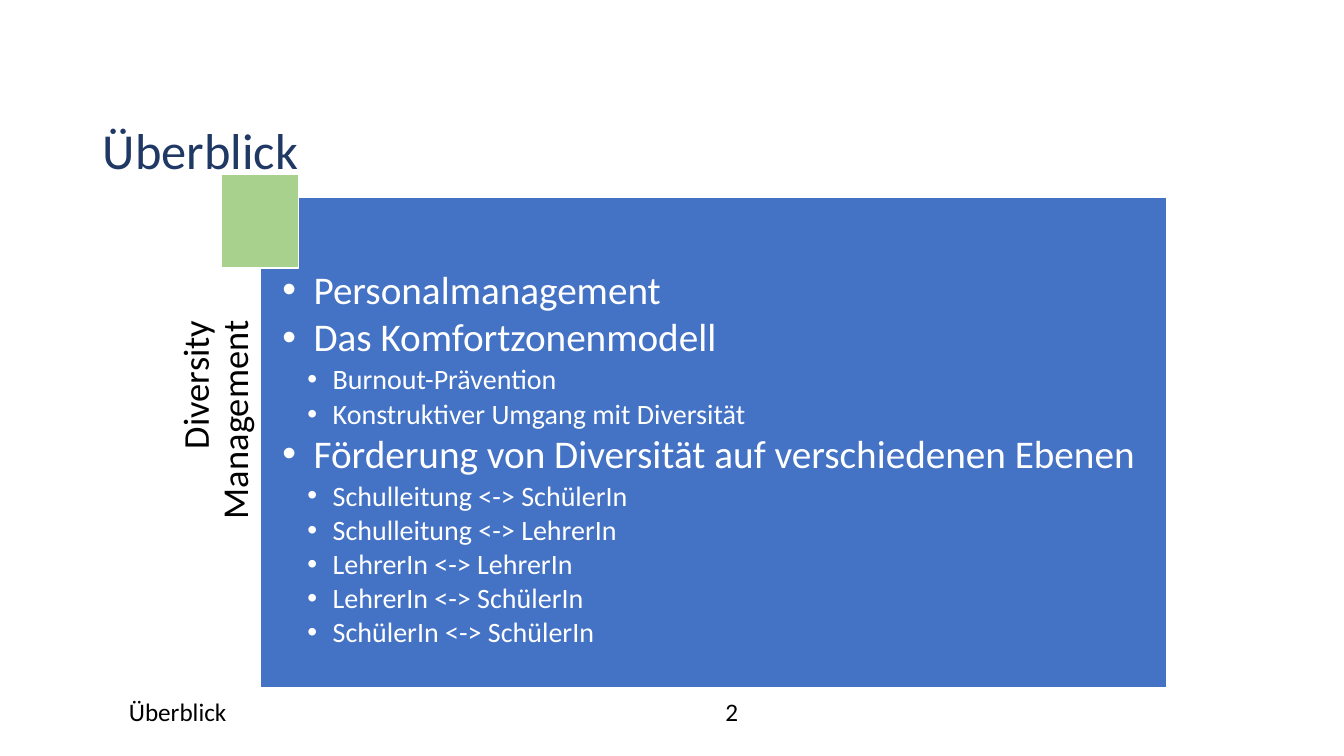
import pptx
import pptx.util
import pptx.dml.color
import pptx.enum.shapes
import pptx.enum.text
import pptx.oxml
import pptx.oxml.ns

COLOURS = {
    "heading": "203864",
    "panel": "4472C4",
    "accent": "A9D18E",
    "light": "FFFFFF",
    "dark": "000000",
}
ALIGN = pptx.enum.text.PP_ALIGN

TOPICS = [
    (0, "Personalmanagement"),
    (0, "Das Komfortzonenmodell"),
    (1, "Burnout-Prävention"),
    (1, "Konstruktiver Umgang mit Diversität"),
    (0, "Förderung von Diversität auf verschiedenen Ebenen"),
    (1, "Schulleitung <-> SchülerIn"),
    (1, "Schulleitung <-> LehrerIn"),
    (1, "LehrerIn <-> LehrerIn"),
    (1, "LehrerIn <-> SchülerIn"),
    (1, "SchülerIn <-> SchülerIn"),
]


class Deck:
    font = "Calibri"
    columns = 100
    rows = 100
    level_sizes = (28, 20)
    level_margins = (2.33, 3.75)
    level_hangings = (2.33, 1.88)

    def __init__(self):
        self.presentation = pptx.Presentation()
        self.presentation.slide_width = pptx.util.Inches(13.33)
        self.presentation.slide_height = pptx.util.Inches(7.5)
        layout = self.presentation.slide_layouts[1]
        self.slide = self.presentation.slides.add_slide(layout)

    def across(self, count):
        return round(self.presentation.slide_width * count / self.columns)

    def down(self, count):
        return round(self.presentation.slide_height * count / self.rows)

    def box(self, left, top, width, height):
        return self.across(left), self.down(top), self.across(width), self.down(height)

    def place(self, shape, area):
        shape.left, shape.top, shape.width, shape.height = self.box(*area)

    def colour(self, name):
        return pptx.dml.color.RGBColor.from_string(COLOURS[name])

    def paint(self, shape, fill):
        shape.fill.solid()
        shape.fill.fore_color.rgb = self.colour(fill)
        shape.line.color.rgb = self.colour("light")
        shape.line.width = pptx.util.Pt(1)

    def prepare(self, frame):
        frame.word_wrap = True
        frame.auto_size = pptx.enum.text.MSO_AUTO_SIZE.NONE
        frame.vertical_anchor = pptx.enum.text.MSO_ANCHOR.TOP

    def style(self, paragraph, size, colour, align=ALIGN.LEFT, spacing=0.9):
        paragraph.alignment = align
        paragraph.line_spacing = spacing
        for run in paragraph.runs:
            run.font.name = self.font
            run.font.size = pptx.util.Pt(size)
            run.font.color.rgb = self.colour(colour)

    def bullet(self, paragraph, level):
        properties = paragraph._p.get_or_add_pPr()
        properties.set("marL", str(self.across(self.level_margins[level])))
        properties.set("indent", str(-self.across(self.level_hangings[level])))
        namespace = pptx.oxml.ns.nsdecls("a")
        for markup in ('buFont {} typeface="Arial"', 'buChar {} char="•"'):
            properties.append(pptx.oxml.parse_xml(f"<a:{markup.format(namespace)}/>"))

    def title(self, text, area):
        heading = self.slide.shapes.title
        self.place(heading, area)
        heading.text_frame.text = text
        self.prepare(heading.text_frame)
        self.style(heading.text_frame.paragraphs[0], 36, "heading")

    def topic_panel(self, topics, area):
        panel = self.slide.placeholders[1]
        self.place(panel, area)
        self.paint(panel, "panel")
        frame = panel.text_frame
        frame.text = "\n".join(text for _, text in topics)
        self.prepare(frame)
        frame.margin_left = frame.margin_right = self.across(1.65)
        frame.margin_top, frame.margin_bottom = self.down(9.6), self.down(2.93)
        for paragraph, (level, _) in zip(frame.paragraphs, topics):
            size = self.level_sizes[level]
            paragraph.level = level
            self.bullet(paragraph, level)
            paragraph.space_before = pptx.util.Pt(0)
            paragraph.space_after = pptx.util.Pt(0.14 * size)
            self.style(paragraph, size, "light")

    def text(self, text, area, size, align=ALIGN.LEFT, spacing=1.0):
        caption = self.slide.shapes.add_textbox(*self.box(*area))
        caption.text_frame.text = text
        self.prepare(caption.text_frame)
        self.style(caption.text_frame.paragraphs[0], size, "dark", align, spacing)
        return caption

    def side_label(self, text, area):
        label = self.text(text, area, 26, ALIGN.RIGHT, 0.9)
        label.rotation = 270
        frame = label.text_frame
        frame.margin_left = frame.margin_top = frame.margin_bottom = 0
        frame.margin_right = self.across(5.4)

    def block(self, area, fill):
        block = self.slide.shapes.add_shape(
            pptx.enum.shapes.MSO_SHAPE.RECTANGLE, *self.box(*area))
        block.shadow.inherit = False
        self.paint(block, fill)


def main():
    deck = Deck()
    deck.title("Überblick", (6.9, 16, 86.25, 12.93))
    deck.topic_panel(TOPICS, (19.35, 26.13, 67.43, 64.8))
    deck.side_label("Diversity Management", (1.8, 53.07, 28.95, 10.93))
    deck.block((16.43, 23.07, 5.78, 12.4), "accent")
    deck.text("Überblick", (8.85, 91.47, 33.75, 5.33), 18)
    deck.text("2", (43.2, 91.47, 22.5, 5.33), 18, ALIGN.CENTER)
    deck.presentation.save("out.pptx")


if __name__ == "__main__":
    main()
